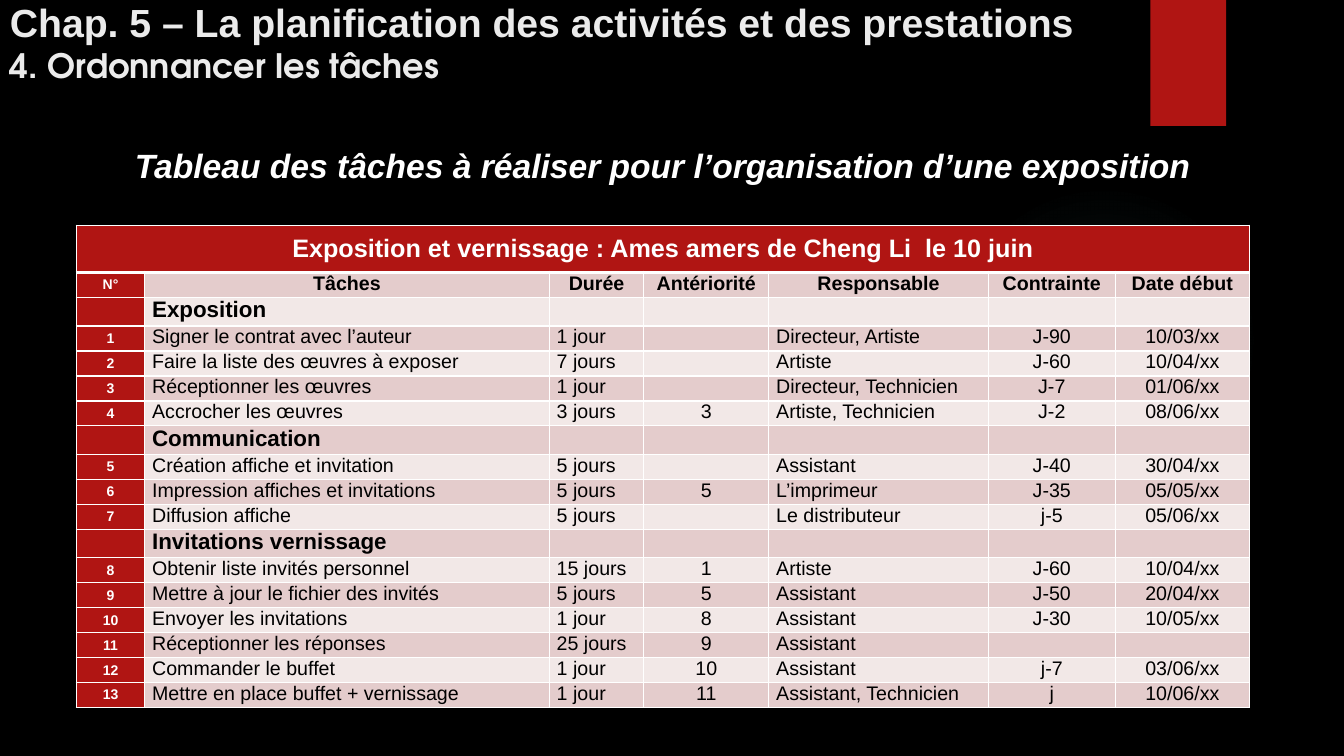
"""Build the slide listing the tasks of an exhibition and its opening."""
from lxml.etree import SubElement
from pptx import Presentation
from pptx.dml.color import RGBColor
from pptx.enum.shapes import MSO_SHAPE
from pptx.enum.text import MSO_ANCHOR, PP_ALIGN
from pptx.oxml import parse_xml
from pptx.oxml.ns import qn
from pptx.util import Pt

CHAPTER = "Chap. 5 – La planification des activités et des prestations"
SECTION = "4. Ordonnancer les tâches"
SUBTITLE = "Tableau des tâches à réaliser pour l’organisation d’une exposition"
TABLE_TITLE = "Exposition et vernissage : Ames amers de Cheng Li  le 10 juin"
HEADINGS = ("N°", "Tâches", "Durée", "Antériorité", "Responsable", "Contrainte", "Date début")
GROUPS = {
    "Exposition": [
        ("Signer le contrat avec l’auteur", "1 jour", "", "Directeur, Artiste", "J-90", "10/03/xx"),
        ("Faire la liste des œuvres à exposer", "7 jours", "", "Artiste", "J-60", "10/04/xx"),
        ("Réceptionner les œuvres", "1 jour", "", "Directeur, Technicien", "J-7", "01/06/xx"),
        ("Accrocher les œuvres", "3 jours", "3", "Artiste, Technicien", "J-2", "08/06/xx"),
    ],
    "Communication": [
        ("Création affiche et invitation", "5 jours", "", "Assistant", "J-40", "30/04/xx"),
        ("Impression affiches et invitations", "5 jours", "5", "L’imprimeur", "J-35", "05/05/xx"),
        ("Diffusion affiche", "5 jours", "", "Le distributeur", "j-5", "05/06/xx"),
    ],
    "Invitations vernissage": [
        ("Obtenir liste invités personnel", "15 jours", "1", "Artiste", "J-60", "10/04/xx"),
        ("Mettre à jour le fichier des invités", "5 jours", "5", "Assistant", "J-50", "20/04/xx"),
        ("Envoyer les invitations", "1 jour", "8", "Assistant", "J-30", "10/05/xx"),
        ("Réceptionner les réponses", "25 jours", "9", "Assistant", "", ""),
        ("Commander le buffet", "1 jour", "10", "Assistant", "j-7", "03/06/xx"),
        ("Mettre en place buffet + vernissage", "1 jour", "11", "Assistant, Technicien", "j", "10/06/xx"),
    ],
}
COLUMN_WIDTHS = (48.9, 289, 67.5, 89.3, 156.8, 90.7, 95.9)
LEFT_ALIGNED = (1, 2, 4)
TITLE_HEIGHT, GROUP_HEIGHT, TASK_HEIGHT = 33.9, 20.4, 17.85
GLOW_STOPS = ((0, 7), (36, 6), (69, 0))

BLACK = RGBColor(0x00, 0x00, 0x00)
WHITE = RGBColor(0xFF, 0xFF, 0xFF)
PALE_GREY = RGBColor(0xEB, 0xEB, 0xEB)
RED = RGBColor(0xB0, 0x15, 0x13)
TEAL = RGBColor(0x50, 0xB9, 0xC1)
BANDS = (RGBColor(0xF2, 0xE8, 0xE7), RGBColor(0xE4, 0xCC, 0xCC))
DRAWING = "http://schemas.openxmlformats.org/drawingml/2006/main"


def style_font(font, size, color, bold=True, italic=False, name="Arial"):
    font.name, font.size, font.bold, font.italic = name, Pt(size), bold, italic
    font.color.rgb = color


def add_plain_shape(slide, kind, left, top, width, height):
    shape = slide.shapes.add_shape(kind, Pt(left), Pt(top), Pt(width), Pt(height))
    shape.shadow.inherit = False
    shape.line.fill.background()
    return shape


def add_glow(slide):
    glow = add_plain_shape(slide, MSO_SHAPE.OVAL, 677.5, 131.8, 221.8, 221.8)
    stops = "".join(
        f'<a:gs pos="{position * 1000}"><a:srgbClr val="{TEAL}">'
        f'<a:alpha val="{opacity * 1000}"/></a:srgbClr></a:gs>'
        for position, opacity in GLOW_STOPS)
    gradient = parse_xml(
        f'<a:gradFill xmlns:a="{DRAWING}"><a:gsLst>{stops}</a:gsLst><a:path path="circle">'
        '<a:fillToRect l="50000" t="50000" r="50000" b="50000"/></a:path></a:gradFill>')
    glow._element.spPr.find(qn("a:prstGeom")).addnext(gradient)


def add_text_frame(slide, left, top, width, height):
    frame = slide.shapes.add_textbox(Pt(left), Pt(top), Pt(width), Pt(height)).text_frame
    frame.word_wrap = True
    return frame


def add_title(slide):
    frame = add_text_frame(slide, 0, 0, 805.7, 61.2)
    frame.margin_top = frame.margin_bottom = 0
    frame.vertical_anchor = MSO_ANCHOR.BOTTOM
    paragraph = frame.paragraphs[0]
    chapter = paragraph.add_run()
    chapter.text = CHAPTER
    style_font(chapter.font, 28, PALE_GREY)
    paragraph.add_line_break()
    section = paragraph.add_run()
    section.text = SECTION
    style_font(section.font, 24, PALE_GREY, name="TeX Gyre Adventor")


def add_subtitle(slide):
    paragraph = add_text_frame(slide, 12.2, 100.1, 922.3, 36).paragraphs[0]
    paragraph.text = SUBTITLE
    paragraph.alignment = PP_ALIGN.CENTER
    style_font(paragraph.font, 24, WHITE, italic=True)


def set_borders(cell, top, bottom):
    for side, width in (("L", 1), ("R", 1), ("T", top), ("B", bottom)):
        line = SubElement(cell._tc.get_or_add_tcPr(), qn(f"a:ln{side}"), w=str(Pt(width)))
        SubElement(SubElement(line, qn("a:solidFill")), qn("a:srgbClr"), val=str(WHITE))


def fill_cell(cell, text, fill, size, color, bold, centred, middle):
    cell.fill.solid()
    cell.fill.fore_color.rgb = fill
    cell.margin_left = cell.margin_right = Pt(5.3)
    cell.margin_top = cell.margin_bottom = 0
    cell.vertical_anchor = MSO_ANCHOR.MIDDLE if middle else MSO_ANCHOR.TOP
    paragraph = cell.text_frame.paragraphs[0]
    paragraph.alignment = PP_ALIGN.CENTER if centred else PP_ALIGN.LEFT
    if text:
        paragraph.text = text
        style_font(paragraph.font, size, color, bold)
    else:
        paragraph._p.get_or_add_endParaRPr().set("sz", "1000")


def table_rows():
    rows = [("title", (TABLE_TITLE,) + ("",) * 6), ("heading", HEADINGS)]
    number = 0
    for group, tasks in GROUPS.items():
        rows.append(("group", ("", group) + ("",) * 5))
        for task in tasks:
            number += 1
            rows.append(("task", (str(number),) + task))
    return rows


def add_task_table(slide):
    rows = table_rows()
    heights = {"title": TITLE_HEIGHT, "group": GROUP_HEIGHT}
    row_heights = [heights.get(kind, TASK_HEIGHT) for kind, _ in rows]
    table = slide.shapes.add_table(
        len(rows), len(COLUMN_WIDTHS), Pt(54.5), Pt(160.8),
        Pt(sum(COLUMN_WIDTHS)), Pt(sum(row_heights))).table
    table.horz_banding = False
    for column, width in zip(table.columns, COLUMN_WIDTHS):
        column.width = Pt(width)
    for row_index, (kind, texts) in enumerate(rows):
        table.rows[row_index].height = Pt(row_heights[row_index])
        for column_index, text in enumerate(texts):
            cell = table.cell(row_index, column_index)
            set_borders(cell, 3 if kind == "heading" else 1, 3 if kind == "title" else 1)
            red = kind == "title" or column_index == 0
            size = {"title": 18, "group": 16}.get(kind, 10 if red else 14)
            fill_cell(
                cell, text, RED if red else BANDS[row_index % 2], size,
                WHITE if red else BLACK, red or kind != "task",
                kind in ("title", "heading") or column_index not in LEFT_ALIGNED
                and kind != "group", red)
    table.cell(0, 0).merge(table.cell(0, len(COLUMN_WIDTHS) - 1))


def main():
    presentation = Presentation()
    presentation.slide_width, presentation.slide_height = Pt(960), Pt(540)
    slide = presentation.slides.add_slide(presentation.slide_layouts[6])
    slide.background.fill.solid()
    slide.background.fill.fore_color.rgb = BLACK
    add_glow(slide)
    ribbon = add_plain_shape(slide, MSO_SHAPE.RECTANGLE, 821.8, 0, 54, 90)
    ribbon.fill.solid()
    ribbon.fill.fore_color.rgb = RED
    add_title(slide)
    add_subtitle(slide)
    add_task_table(slide)
    presentation.save("out.pptx")


if __name__ == "__main__":
    main()
